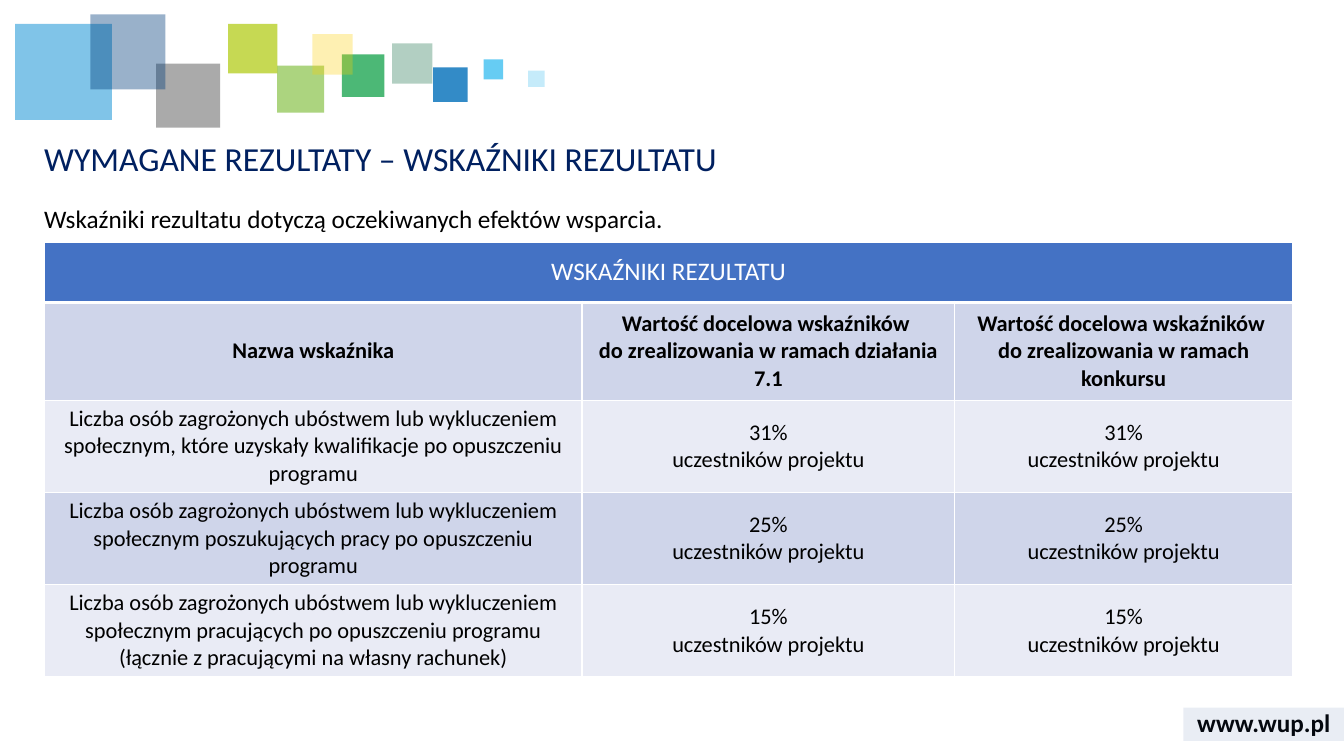
from typing import NamedTuple

from lxml.etree import SubElement
from pptx import Presentation
from pptx.dml.color import RGBColor
from pptx.enum.shapes import MSO_SHAPE as Shape
from pptx.enum.text import MSO_ANCHOR as Anchor, PP_ALIGN as Align
from pptx.oxml.ns import qn
from pptx.util import Pt

BLACK = RGBColor(0x00, 0x00, 0x00)
WHITE = RGBColor(0xFF, 0xFF, 0xFF)
NAVY = RGBColor(0x00, 0x20, 0x60)
HEADER_BLUE = RGBColor(0x44, 0x72, 0xC4)
BAND_DARK = RGBColor(0xCF, 0xD5, 0xEA)
BAND_LIGHT = RGBColor(0xE9, 0xEB, 0xF5)
FOOTER_BLUE = RGBColor(0x2F, 0x55, 0x97)
TEAL = RGBColor(0x00, 0x61, 0x38)
OCEAN = RGBColor(0x00, 0x6E, 0xB9)
GREEN = RGBColor(0x00, 0x9A, 0x3C)
AZURE = RGBColor(0x02, 0x8B, 0xD3)
LEAF = RGBColor(0x75, 0xB8, 0x2A)
GREY = RGBColor(0x57, 0x57, 0x57)
DEEP_BLUE = RGBColor(0x00, 0x3D, 0x7C)
SKY = RGBColor(0x40, 0xC0, 0xF1)
LIME = RGBColor(0xAF, 0xCA, 0x0B)
YELLOW = RGBColor(0xFE, 0xD0, 0x00)


class Tile(NamedTuple):
    left: float
    top: float
    width: float
    height: float
    color: RGBColor
    opacity: int


class Label(NamedTuple):
    text: str
    left: float
    top: float
    width: float
    height: float
    anchor: Anchor
    paragraph: dict
    font: dict
    color: RGBColor


HEADER_TILES = [
    Tile(280.1, 31, 28.8, 28.8, TEAL, 30),
    Tile(309.4, 48.2, 24.7, 24.7, OCEAN, 80),
    Tile(244.3, 38.9, 30.4, 30.4, GREEN, 70),
    Tile(10.8, 17.1, 69.1, 68.6, AZURE, 50),
    Tile(198, 46.8, 33.6, 33.6, LEAF, 60),
    Tile(111.6, 45.4, 45.6, 45.8, GREY, 50),
    Tile(64.5, 10.2, 53.6, 53.6, DEEP_BLUE, 40),
    Tile(345.4, 42.5, 14, 14.2, SKY, 80),
    Tile(162.9, 17.1, 35.3, 35.3, LIME, 70),
    Tile(223.2, 24.5, 28.8, 28.8, YELLOW, 30),
    Tile(377.3, 50.4, 11.8, 11.8, SKY, 30),
]
FOOTER_BAND = Tile(845.3, 505.4, 114.9, 23.8, FOOTER_BLUE, 10)

FOOTER = Label("www.wup.pl", 845.3, 501.8, 114.9, 28.8, Anchor.MIDDLE,
               {"alignment": Align.CENTER}, {"size": Pt(18), "bold": True}, BLACK)
TITLE = Label("WYMAGANE REZULTATY – WSKAŹNIKI REZULTATU", 24.5, 97.9, 893.5, 39.6,
              Anchor.TOP, {"line_spacing": 0.9}, {"size": Pt(24)}, NAVY)
INTRO = Label("Wskaźniki rezultatu dotyczą oczekiwanych efektów wsparcia.",
              24.5, 144, 893.5, 342.7, Anchor.TOP, {"line_spacing": 0.9},
              {"size": Pt(18)}, BLACK)

TABLE_LEFT, TABLE_TOP = 31.9, 172.8
COLUMN_WIDTHS = [383.8, 266.4, 241.2]
ROW_HEIGHTS = [43.2, 69.8, 65.9, 65.9, 65.9]
TARGET = "Wartość docelowa wskaźników \vdo zrealizowania w ramach "
GROUP = "Liczba osób zagrożonych ubóstwem lub wykluczeniem "
INDICATORS = [
    ("społecznym, które uzyskały kwalifikacje po opuszczeniu programu", "31%"),
    ("społecznym poszukujących pracy po opuszczeniu programu", "25%"),
    ("społecznym pracujących po opuszczeniu programu "
     "(łącznie z pracującymi na własny rachunek)", "15%"),
]
TABLE_ROWS = [
    ["WSKAŹNIKI REZULTATU"],
    ["Nazwa wskaźnika", TARGET + "działania 7.1", TARGET + "konkursu"],
] + [
    [GROUP + name] + [f"{share}\nuczestników projektu"] * 2
    for name, share in INDICATORS
]


def apply(target: object, values: dict) -> None:
    for name, value in values.items():
        setattr(target, name, value)


def format_text(frame: object, paragraph_values: dict, font_values: dict,
                color: RGBColor) -> None:
    for para in frame.paragraphs:
        apply(para, paragraph_values)
        for span in para.runs:
            apply(span.font, {"name": "Calibri", **font_values})
            span.font.color.rgb = color


def draw_tile(shapes: object, tile: Tile) -> None:
    box = shapes.add_shape(Shape.RECTANGLE, *map(Pt, tile[:4]))
    box.shadow.inherit = False
    box.line.fill.background()
    box.fill.solid()
    box.fill.fore_color.rgb = tile.color
    color = next(box.element.iter(qn("a:srgbClr")))
    SubElement(color, qn("a:alpha"), val=str(tile.opacity * 1000))


def draw_label(shapes: object, label: Label) -> None:
    box = shapes.add_textbox(*map(Pt, label[1:5]))
    frame = box.text_frame
    apply(frame, {"word_wrap": True, "vertical_anchor": label.anchor,
                  "text": label.text})
    format_text(frame, label.paragraph, label.font, label.color)


def add_borders(cell: object, bottom: float) -> None:
    properties = cell._tc.get_or_add_tcPr()
    for side, width in {"L": 1, "R": 1, "T": 1, "B": bottom}.items():
        line = SubElement(properties, qn(f"a:ln{side}"), w=str(Pt(width)))
        fill = SubElement(line, qn("a:solidFill"))
        SubElement(fill, qn("a:srgbClr"), val=str(WHITE))


def draw_table(shapes: object) -> None:
    table = shapes.add_table(
        len(ROW_HEIGHTS), len(COLUMN_WIDTHS), Pt(TABLE_LEFT), Pt(TABLE_TOP),
        Pt(sum(COLUMN_WIDTHS)), Pt(sum(ROW_HEIGHTS))).table
    apply(table, {"first_row": False, "horz_banding": False})
    for column, width in zip(table.columns, COLUMN_WIDTHS):
        column.width = Pt(width)
    for index, (row, height) in enumerate(zip(table.rows, ROW_HEIGHTS)):
        row.height = Pt(height)
        is_header = index == 0
        band = BAND_DARK if index % 2 else BAND_LIGHT
        for cell in row.cells:
            add_borders(cell, bottom=3 if is_header else 1)
            cell.fill.solid()
            cell.fill.fore_color.rgb = HEADER_BLUE if is_header else band
            cell.vertical_anchor = Anchor.MIDDLE
        for cell, text in zip(row.cells, TABLE_ROWS[index]):
            cell.text_frame.text = text
            font = {"size": Pt(18 if is_header else 16), "bold": index == 1}
            format_text(cell.text_frame, {"alignment": Align.CENTER}, font,
                        WHITE if is_header else BLACK)
    table.cell(0, 0).merge(table.cell(0, len(COLUMN_WIDTHS) - 1))


def main() -> None:
    deck = Presentation()
    apply(deck, {"slide_width": Pt(960), "slide_height": Pt(540)})
    page = deck.slides.add_slide(deck.slide_layouts[6])
    draw_label(page.shapes, FOOTER)
    header = page.shapes.add_group_shape()
    for tile in HEADER_TILES:
        draw_tile(header.shapes, tile)
    draw_tile(page.shapes, FOOTER_BAND)
    for label in (TITLE, INTRO):
        draw_label(page.shapes, label)
    draw_table(page.shapes)
    deck.save("out.pptx")


if __name__ == "__main__":
    main()
